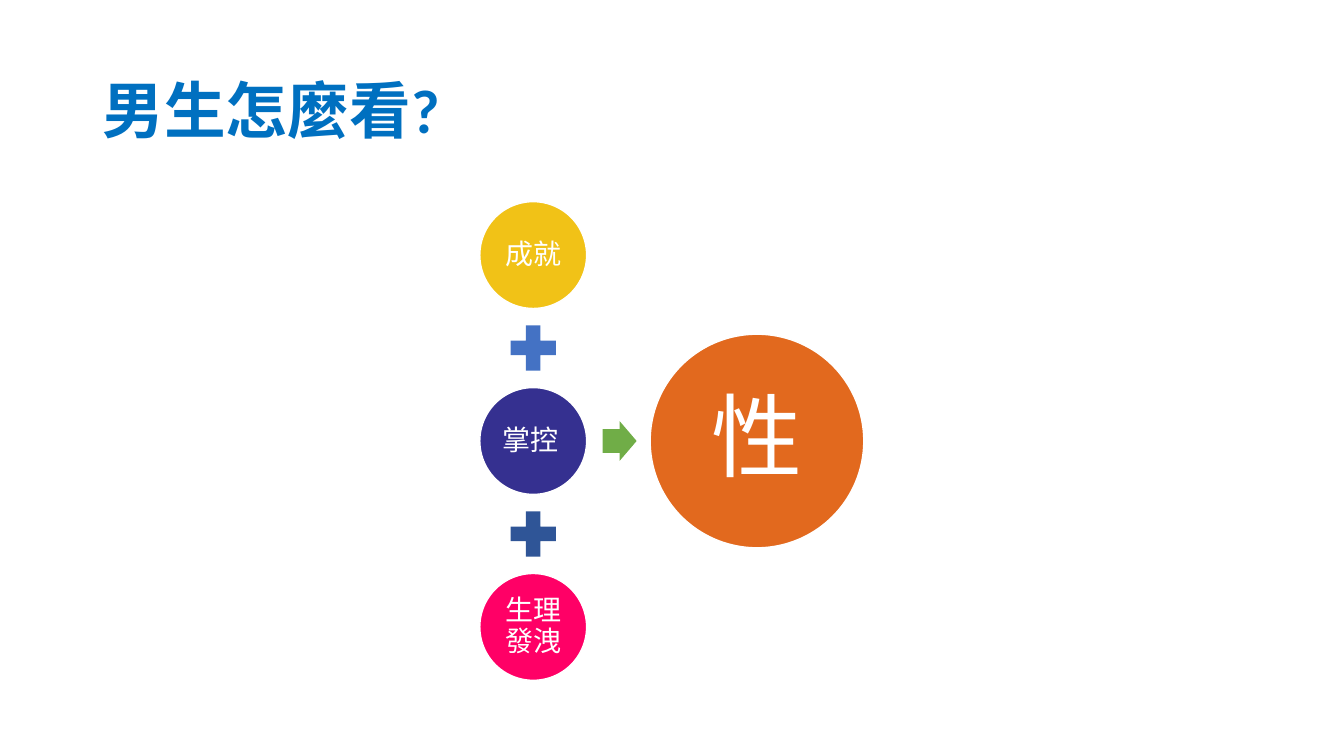
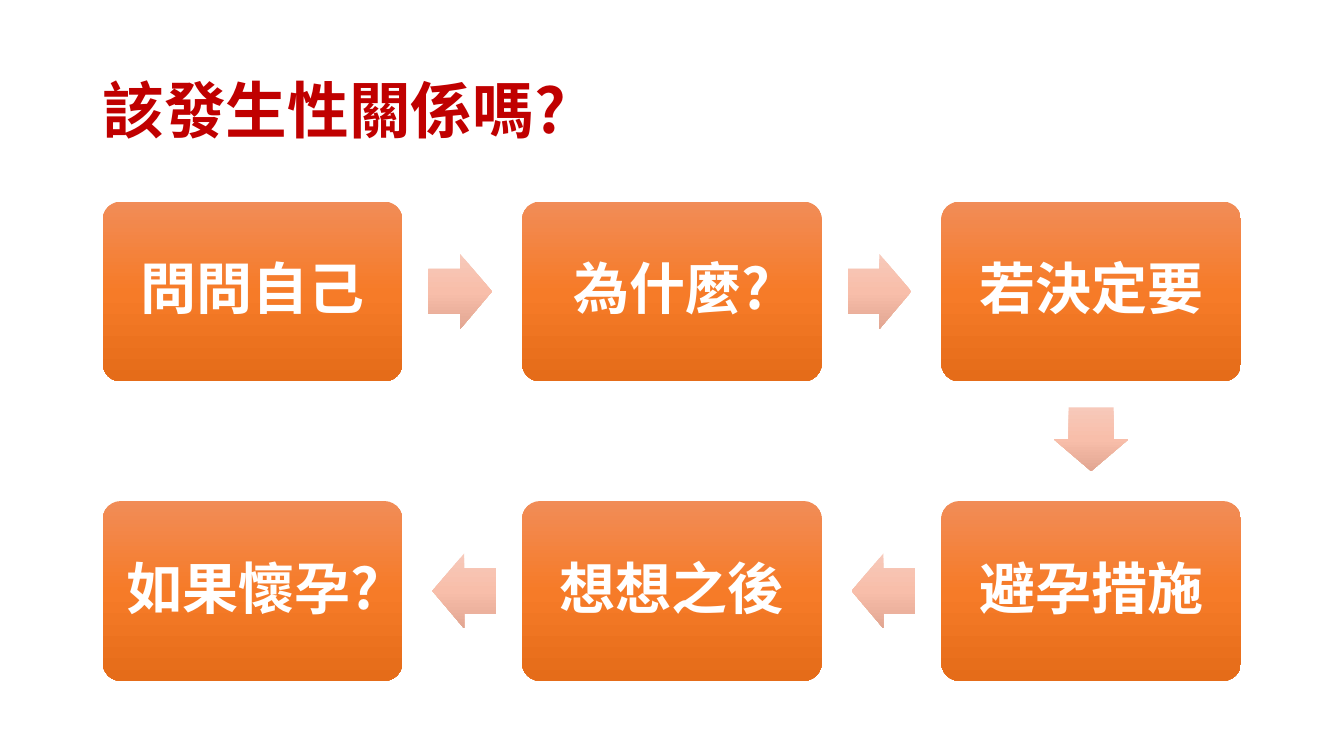
import copy

import pptx
import pptx.dml.color
import pptx.enum.shapes
import pptx.enum.text
import pptx.oxml.ns
import pptx.util

Pt = pptx.util.Pt
SHAPE = pptx.enum.shapes.MSO_SHAPE
ALIGN = pptx.enum.text.PP_ALIGN

COLOURS = {
    "white": "FFFFFF",
    "blue title": "0070C0",
    "red title": "C00000",
    "yellow": "F1C217",
    "indigo": "353090",
    "pink": "FF0066",
    "orange": "E2691E",
    "blue": "4472C4",
    "navy": "2F5597",
    "green": "70AD47",
}
STEP_GRADIENT = ["F18C57", "F67B28", "E56C19"]
ARROW_GRADIENT = ["F7C9BA", "F8BEAA", "E2A692"]


def colour(name):
    return pptx.dml.color.RGBColor.from_string(COLOURS[name])


class Slides:
    def __init__(self):
        self.deck = pptx.Presentation()
        self.deck.slide_width = Pt(960)
        self.deck.slide_height = Pt(540)
        self.page = None

    def new_page(self, title, title_colour, font):
        self.page = self.deck.slides.add_slide(self.deck.slide_layouts[5])
        self.font = font
        box = self.page.shapes.title
        box.left, box.top, box.width, box.height = Pt(66.2), Pt(28.8), Pt(828), Pt(104.4)
        self.text(box, title, 44, title_colour, True, ALIGN.LEFT)

    def text(self, box, words, size, text_colour="white", bold=False, align=ALIGN.CENTER, inset=None):
        frame = box.text_frame
        frame.word_wrap = True
        frame.auto_size = pptx.enum.text.MSO_AUTO_SIZE.NONE
        frame.vertical_anchor = pptx.enum.text.MSO_ANCHOR.MIDDLE
        if inset is not None:
            frame.margin_left = frame.margin_right = Pt(inset)
            frame.margin_top = frame.margin_bottom = Pt(inset)
        para = frame.paragraphs[0]
        para.text = words
        para.alignment = align
        para.line_spacing = 0.9
        para.font.name = self.font
        para.font.size = Pt(size)
        para.font.bold = bold
        para.font.color.rgb = colour(text_colour)

    def shape(self, kind, x, y, width, height, fill, adjustments=()):
        shape = self.page.shapes.add_shape(
            kind, Pt(x - width / 2), Pt(y - height / 2), Pt(width), Pt(height))
        shape.shadow.inherit = False
        shape.line.fill.background()
        for index, value in enumerate(adjustments):
            shape.adjustments[index] = value
        if isinstance(fill, list):
            self.gradient(shape, fill)
        else:
            shape.fill.solid()
            shape.fill.fore_color.rgb = colour(fill)
        return shape

    def gradient(self, shape, shades):
        shape.fill.gradient()
        shape.fill.gradient_angle = 270
        stop_list = next(shape._element.spPr.iter(pptx.oxml.ns.qn("a:gsLst")))
        stop_list.insert(1, copy.deepcopy(stop_list[0]))
        for index, (stop, shade) in enumerate(zip(shape.fill.gradient_stops, shades)):
            stop.position = index / 2
            stop.color.rgb = pptx.dml.color.RGBColor.from_string(shade)

    def circle(self, x, y, diameter, fill, words, size, inset):
        circle = self.shape(SHAPE.OVAL, x, y, diameter, diameter, fill)
        circle.line.color.rgb = colour("white")
        circle.line.width = Pt(1)
        self.text(circle, words, size, inset=inset)

    def plus(self, x, y, fill):
        self.shape(SHAPE.MATH_PLUS, x, y, 44, 44, fill)

    def arrow(self, kind, x, y, width, height, fill):
        self.shape(kind, x, y, width, height, fill, (0.6, 0.5))

    def step(self, x, y, words):
        step = self.shape(SHAPE.ROUNDED_RECTANGLE, x, y, 214, 128.4, STEP_GRADIENT, (0.1,))
        self.text(step, words, 40, bold=True, inset=12)

    def step_arrow(self, start, end):
        across, down = end[0] - start[0], end[1] - start[1]
        x, y = (start[0] + end[0]) / 2, (start[1] + end[1]) / 2
        lag = 1.4
        if down:
            self.arrow(SHAPE.DOWN_ARROW, x, y - lag, 53.5, 45.4, ARROW_GRADIENT)
        elif across > 0:
            self.arrow(SHAPE.RIGHT_ARROW, x - lag, y, 45.4, 53.5, ARROW_GRADIENT)
        else:
            self.arrow(SHAPE.LEFT_ARROW, x + lag, y, 45.4, 53.5, ARROW_GRADIENT)


def reasons_page(slides):
    slides.new_page("男生怎麼看?", "blue title", "Calibri")
    x, top, gap = 380.9, 182.2, 132.8
    middle = top + gap
    reasons = [("成就", "yellow"), ("掌控 ", "indigo"), ("生理發洩", "pink")]
    for index, (words, fill) in enumerate(reasons):
        slides.circle(x, top + index * gap, 76.3, fill, words, 20, 2)
    for index, fill in enumerate(["blue", "navy"]):
        slides.plus(x, top + (index + 0.5) * gap, fill)
    slides.arrow(SHAPE.RIGHT_ARROW, 442.6, middle, 24.3, 28.4, "green")
    slides.circle(540.7, middle, 152.6, "orange", "性", 65, 6.5)


def decision_page(slides):
    slides.new_page("該發生性關係嗎?", "red title", "Noto Sans CJK SC")
    columns = [180.4 + index * 299.5 for index in range(3)]
    upper, lower = 208.2, 422.1
    centres = [(x, upper) for x in columns] + [(x, lower) for x in reversed(columns)]
    steps = ["問問自己", "為什麼?", "若決定要", "避孕措施", "想想之後", "如果懷孕?"]
    for (x, y), words in zip(centres, steps):
        slides.step(x, y, words)
    for start, end in zip(centres, centres[1:]):
        slides.step_arrow(start, end)


def main():
    slides = Slides()
    reasons_page(slides)
    decision_page(slides)
    slides.deck.save("out.pptx")


if __name__ == "__main__":
    main()
